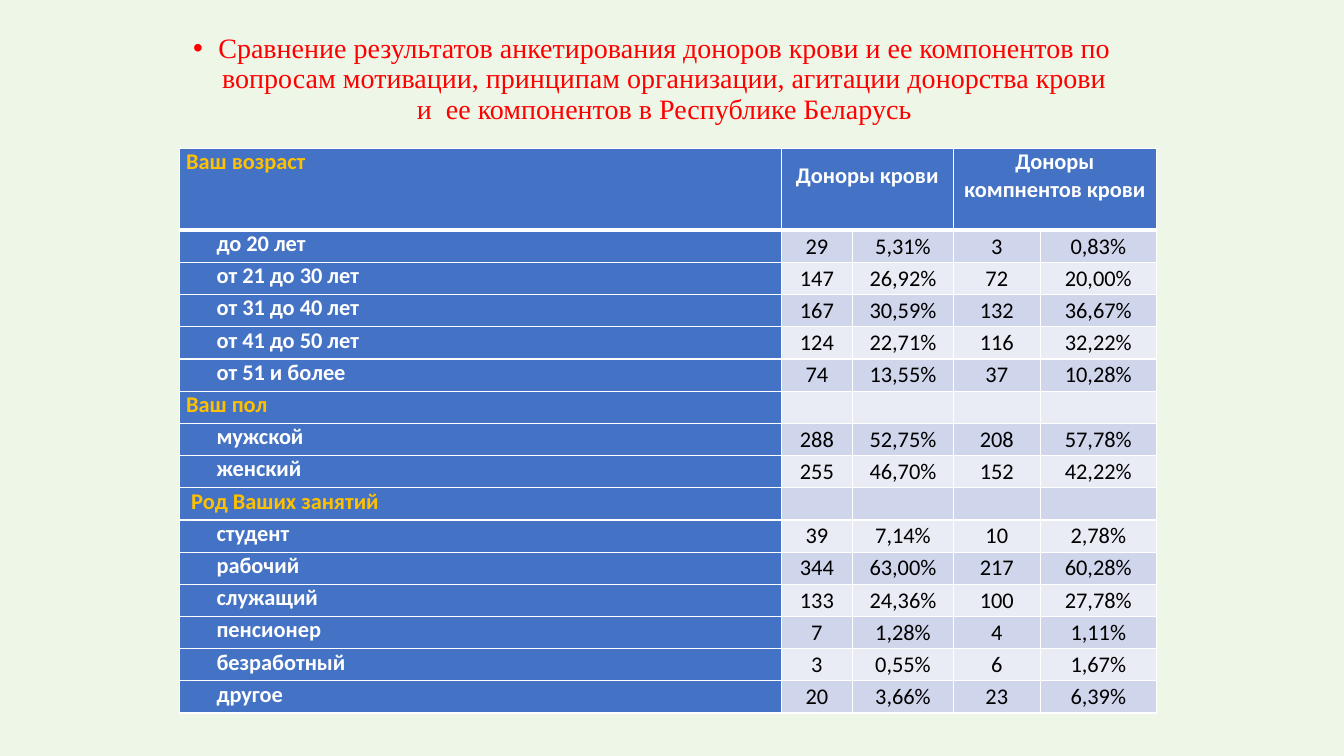
from pptx import Presentation
from pptx.dml.color import RGBColor
from pptx.enum.text import MSO_ANCHOR, PP_ALIGN
from pptx.oxml.xmlchemy import OxmlElement
from pptx.util import Pt

PALE_GREEN = RGBColor(0xEE, 0xF6, 0xE8)
RED = RGBColor(0xFF, 0x00, 0x00)
GOLD = RGBColor(0xFF, 0xC0, 0x00)
WHITE = RGBColor(0xFF, 0xFF, 0xFF)
BLACK = RGBColor(0x00, 0x00, 0x00)
BLUE = RGBColor(0x44, 0x72, 0xC4)
DARK_BAND = RGBColor(0xCF, 0xD5, 0xEA)
LIGHT_BAND = RGBColor(0xE9, 0xEB, 0xF5)

TITLE = (
    "Сравнение результатов анкетирования доноров крови и ее компонентов по "
    "вопросам мотивации, принципам организации, агитации донорства крови "
    "и  ее компонентов в Республике Беларусь"
)
COLUMN_WIDTHS = (430, 51, 72, 62, 83)
HEADER_HEIGHT, ROW_HEIGHT = 58.5, 23
SIDE_MARGIN, ANSWER_INDENT, LINE_HEIGHT = 5, 21.7, 19.5
HEADERS = {0: "Ваш возраст", 1: "Доноры крови", 3: "Доноры компнентов крови"}
SECTION_INDENTS = {"Ваш пол": 0, "Род Ваших занятий": 3.6}
ROWS = (
    ("до 20 лет", "29", "5,31%", "3", "0,83%"),
    ("от 21 до 30 лет", "147", "26,92%", "72", "20,00%"),
    ("от 31 до 40 лет", "167", "30,59%", "132", "36,67%"),
    ("от 41 до 50 лет", "124", "22,71%", "116", "32,22%"),
    ("от 51 и более", "74", "13,55%", "37", "10,28%"),
    ("Ваш пол", "", "", "", ""),
    ("мужской", "288", "52,75%", "208", "57,78%"),
    ("женский", "255", "46,70%", "152", "42,22%"),
    ("Род Ваших занятий", "", "", "", ""),
    ("студент", "39", "7,14%", "10", "2,78%"),
    ("рабочий", "344", "63,00%", "217", "60,28%"),
    ("служащий", "133", "24,36%", "100", "27,78%"),
    ("пенсионер", "7", "1,28%", "4", "1,11%"),
    ("безработный", "3", "0,55%", "6", "1,67%"),
    ("другое", "20", "3,66%", "23", "6,39%"),
)


def style_font(font, name, size, color, bold=False):
    """Set the face, size, colour and weight of a font."""
    font.name, font.size, font.bold = name, Pt(size), bold
    font.color.rgb = color


def add_bullet(para, indent):
    """Give a paragraph a round bullet with a hanging indent."""
    properties = para._p.get_or_add_pPr()
    properties.set("marL", str(Pt(indent)))
    properties.set("indent", str(-Pt(indent)))
    typeface = OxmlElement("a:buFont")
    typeface.set("typeface", "Arial")
    bullet = OxmlElement("a:buChar")
    bullet.set("char", "•")
    properties.insert_element_before(typeface, "a:tabLst", "a:defRPr", "a:extLst")
    properties.insert_element_before(bullet, "a:tabLst", "a:defRPr", "a:extLst")


def add_title(page):
    """Add the centred, bulleted title."""
    box = page.shapes.add_textbox(Pt(128), Pt(21), Pt(675), Pt(476))
    box.text_frame.word_wrap = True
    para = box.text_frame.paragraphs[0]
    para.text = TITLE
    para.alignment = PP_ALIGN.CENTER
    para.line_spacing = 0.9
    style_font(para.font, "Times New Roman", 20, RED)
    add_bullet(para, 18)


def set_borders(cell, top=1, bottom=1):
    """Draw white borders around a cell."""
    properties = cell._tc.get_or_add_tcPr()
    widths = (("a:lnL", 1), ("a:lnR", 1), ("a:lnT", top), ("a:lnB", bottom))
    for position, (tag, width) in enumerate(widths):
        line = OxmlElement(tag)
        line.set("w", str(Pt(width)))
        fill = OxmlElement("a:solidFill")
        color = OxmlElement("a:srgbClr")
        color.set("val", str(WHITE))
        fill.append(color)
        line.append(fill)
        properties.insert(position, line)


def fill_cell(cell, text, fill, color, bold=False, centered=False, indent=0):
    """Write one table cell and set its fill and text style."""
    cell.margin_left, cell.margin_right = Pt(SIDE_MARGIN + indent), Pt(SIDE_MARGIN)
    cell.margin_top = cell.margin_bottom = Pt(0)
    cell.fill.solid()
    cell.fill.fore_color.rgb = fill
    para = cell.text_frame.paragraphs[0]
    if text:
        para.text = text
    style_font(para.font, "Calibri", 16, color, bold)
    if centered:
        para.alignment = PP_ALIGN.CENTER
        cell.vertical_anchor = MSO_ANCHOR.MIDDLE


def fill_header(table):
    """Write the header row with its two merged group headings."""
    for column in range(len(COLUMN_WIDTHS)):
        cell = table.cell(0, column)
        color = WHITE if column else GOLD
        fill_cell(cell, HEADERS.get(column, ""), BLUE, color, True, column > 0)
        set_borders(cell, bottom=3)
        if column:
            cell.margin_bottom = Pt(LINE_HEIGHT)
    for column in (1, 3):
        table.cell(0, column).merge(table.cell(0, column + 1))


def fill_row(table, number, values):
    """Write a section heading or an answer with its figures."""
    label = values[0]
    color = GOLD if label in SECTION_INDENTS else WHITE
    indent = SECTION_INDENTS.get(label, ANSWER_INDENT)
    fill_cell(table.cell(number, 0), label, BLUE, color, True, indent=indent)
    band = DARK_BAND if number % 2 else LIGHT_BAND
    for column, value in enumerate(values[1:], 1):
        fill_cell(table.cell(number, column), value, band, BLACK, centered=True)
    for column in range(len(values)):
        set_borders(table.cell(number, column), top=3 if number == 1 else 1)


def add_survey_table(page):
    """Add the table that compares the two donor groups."""
    height = HEADER_HEIGHT + ROW_HEIGHT * len(ROWS)
    frame = page.shapes.add_table(
        len(ROWS) + 1, len(COLUMN_WIDTHS),
        Pt(128), Pt(106), Pt(sum(COLUMN_WIDTHS)), Pt(height),
    )
    table = frame.table
    table.first_row = table.horz_banding = False
    for column, width in zip(table.columns, COLUMN_WIDTHS):
        column.width = Pt(width)
    for row in table.rows:
        row.height = Pt(ROW_HEIGHT)
    table.rows[0].height = Pt(HEADER_HEIGHT)
    fill_header(table)
    for number, values in enumerate(ROWS, 1):
        fill_row(table, number, values)


def main():
    """Build and save the slide."""
    deck = Presentation()
    deck.slide_width, deck.slide_height = Pt(960), Pt(540)
    page = deck.slides.add_slide(deck.slide_layouts[6])
    page.background.fill.solid()
    page.background.fill.fore_color.rgb = PALE_GREEN
    add_title(page)
    add_survey_table(page)
    deck.save("out.pptx")


if __name__ == "__main__":
    main()
